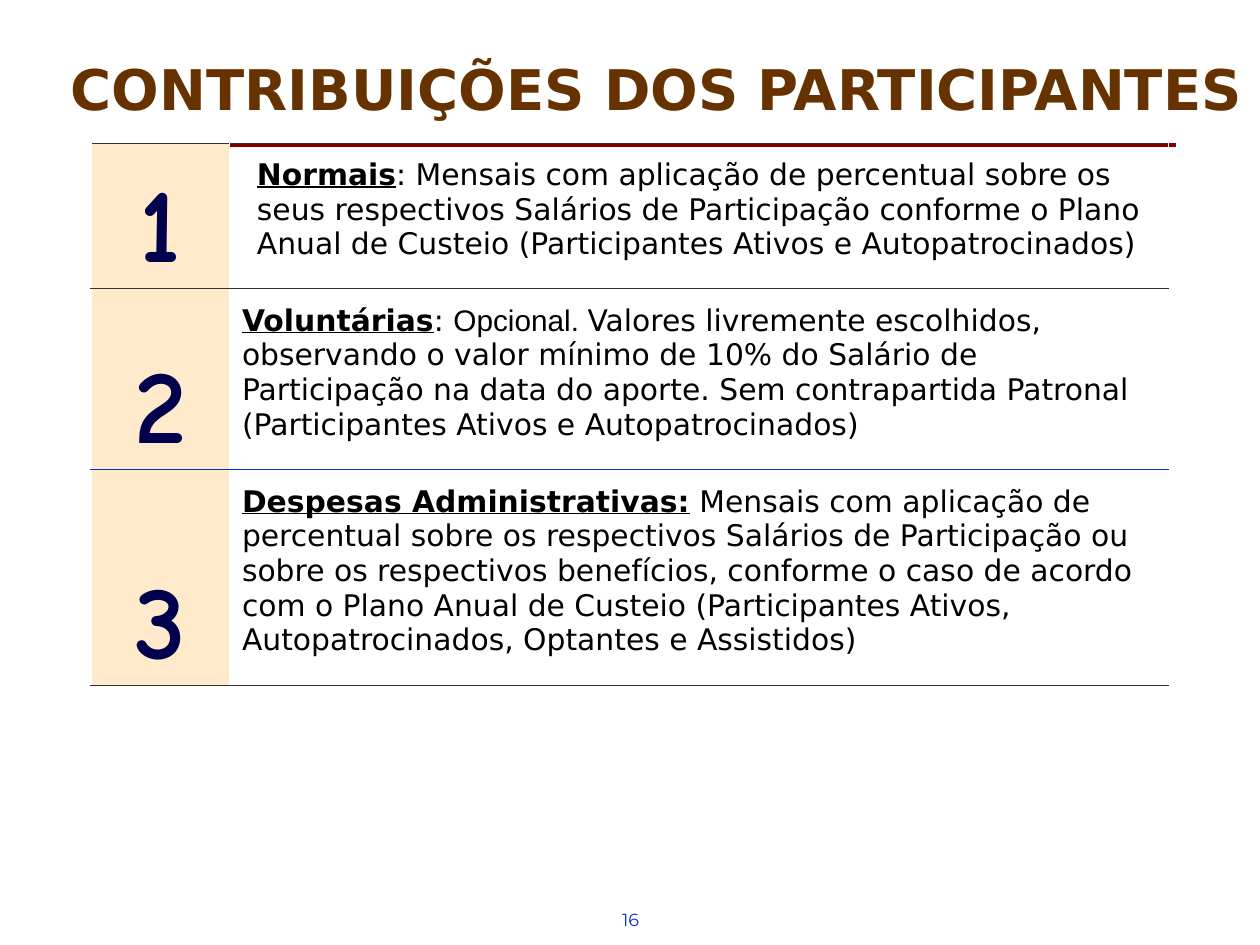
import pptx
import pptx.dml.color
import pptx.enum.text
import pptx.oxml
import pptx.oxml.ns
import pptx.util

Cm = pptx.util.Cm
Pt = pptx.util.Pt
RGB = pptx.dml.color.RGBColor
ALIGN = pptx.enum.text.PP_ALIGN
ANCHOR = pptx.enum.text.MSO_ANCHOR

BROWN = RGB(0x66, 0x33, 0x00)
MAROON = RGB(0x80, 0x00, 0x00)
BLUE = RGB(0x00, 0x33, 0xCC)
NAVY = RGB(0x00, 0x00, 0x4C)
CREAM = RGB(0xFF, 0xEB, 0xCC)
DARK = RGB(0x33, 0x33, 0x33)
BLACK = RGB(0x00, 0x00, 0x00)

TITLE = {"name": "DejaVu Sans", "size": Pt(32), "bold": True}
PAGE = {"name": "Montserrat", "size": Pt(10), "bold": False}
DIGIT = {"name": "Comic Neue", "size": Pt(60), "bold": True}
BODY = {"name": "DejaVu Sans", "size": Pt(17), "bold": False}
HEAD = BODY | {"bold": True, "underline": True}
ARIAL = BODY | {"name": "Arial"}


def add_run(para, text, style, color):
    run = para.add_run()
    run.text = text
    for key, value in style.items():
        setattr(run.font, key, value)
    run.font.color.rgb = color


def add_edge(cell, tag, width, color):
    """Draw one side of a cell; call for lnT before lnB."""
    props = cell._tc.get_or_add_tcPr()
    edge = pptx.oxml.parse_xml(
        f'<a:{tag} {pptx.oxml.ns.nsdecls("a")} w="{Pt(width)}"><a:solidFill>'
        f'<a:srgbClr val="{color}"/></a:solidFill></a:{tag}>'
    )
    props.insert(1 if tag == "lnB" else 0, edge)


deck = pptx.Presentation()
deck.slide_width, deck.slide_height = Cm(25.4), Cm(19.05)
slide = deck.slides.add_slide(deck.slide_layouts[6])
shapes = slide.shapes

# Rule under the title
rule = shapes.add_connector(1, Cm(4.01), Cm(2.92), Cm(23.7), Cm(2.92))
rule.line.color.rgb = MAROON
rule.line.width = Pt(2)
rule._element.spPr.append(
    pptx.oxml.parse_xml(f'<a:effectLst {pptx.oxml.ns.nsdecls("a")}/>')
)

# Title
title = shapes.add_textbox(Cm(1.09), Cm(0.53), Cm(24.31), Cm(1.91)).text_frame
title.word_wrap = True
title.vertical_anchor = ANCHOR.BOTTOM
for side in ("left", "right", "top", "bottom"):
    setattr(title, f"margin_{side}", 0)
para = title.paragraphs[0]
para.alignment = ALIGN.CENTER
para.line_spacing = 0.8
add_run(para, "CONTRIBUIÇÕES DOS PARTICIPANTES", TITLE, BROWN)

# Page number
page = shapes.add_textbox(Cm(12.29), Cm(18.19), Cm(1.8), Cm(0.86)).text_frame
page.word_wrap = True
add_run(page.paragraphs[0], "16", PAGE, BLUE)

# Contributions: row height and runs of text
rows = [
    (2.85, [
        ("Normais", HEAD),
        (": Mensais com aplicação de percentual sobre os seus respectivos "
         "Salários de Participação conforme o Plano Anual de Custeio "
         "(Participantes Ativos e Autopatrocinados)", BODY),
    ]),
    (3.55, [
        ("Voluntárias", HEAD),
        (": ", BODY),
        ("Opcional. ", ARIAL),
        ("Valores livremente escolhidos, observando o valor mínimo de 10% do "
         "Salário de Participação na data do aporte. Sem contrapartida "
         "Patronal (Participantes Ativos e Autopatrocinados)", BODY),
    ]),
    (4.25, [
        ("Despesas Administrativas:", HEAD),
        (" Mensais com aplicação de percentual sobre os respectivos Salários "
         "de Participação ou sobre os respectivos benefícios, conforme o caso "
         "de acordo com o Plano Anual de Custeio (Participantes Ativos, "
         "Autopatrocinados, Optantes e Assistidos)", BODY),
    ]),
]
edges = [(0.5, DARK), (0.5, DARK), (1, BLUE), (0.5, DARK)]

total = sum(height for height, _ in rows)
table = shapes.add_table(
    len(rows), 2, Cm(1.83), Cm(2.9), Cm(21.73), Cm(total)
).table
table.first_row = table.horz_banding = False
table.columns[0].width, table.columns[1].width = Cm(2.8), Cm(18.93)

for i, (height, parts) in enumerate(rows):
    table.rows[i].height = Cm(height)
    digit, body = table.cell(i, 0), table.cell(i, 1)

    digit.fill.solid()
    digit.fill.fore_color.rgb = CREAM
    digit.vertical_anchor = ANCHOR.BOTTOM
    digit.margin_top = digit.margin_bottom = 0
    para = digit.text_frame.paragraphs[0]
    para.alignment = ALIGN.CENTER
    add_run(para, str(i + 1), DIGIT, NAVY)

    body.fill.background()
    body.vertical_anchor = ANCHOR.MIDDLE
    body.margin_top, body.margin_bottom = Cm(0.25), Cm(0.51)
    para = body.text_frame.paragraphs[0]
    if i == 0:
        para._p.get_or_add_pPr().set("marL", str(Cm(0.3)))
    for text, style in parts:
        add_run(para, text, style, BLACK)

    for cell in (digit, body):
        cell.margin_left = cell.margin_right = Cm(0.25)
        add_edge(cell, "lnT", *edges[i])
        add_edge(cell, "lnB", *edges[i + 1])

deck.save("out.pptx")
